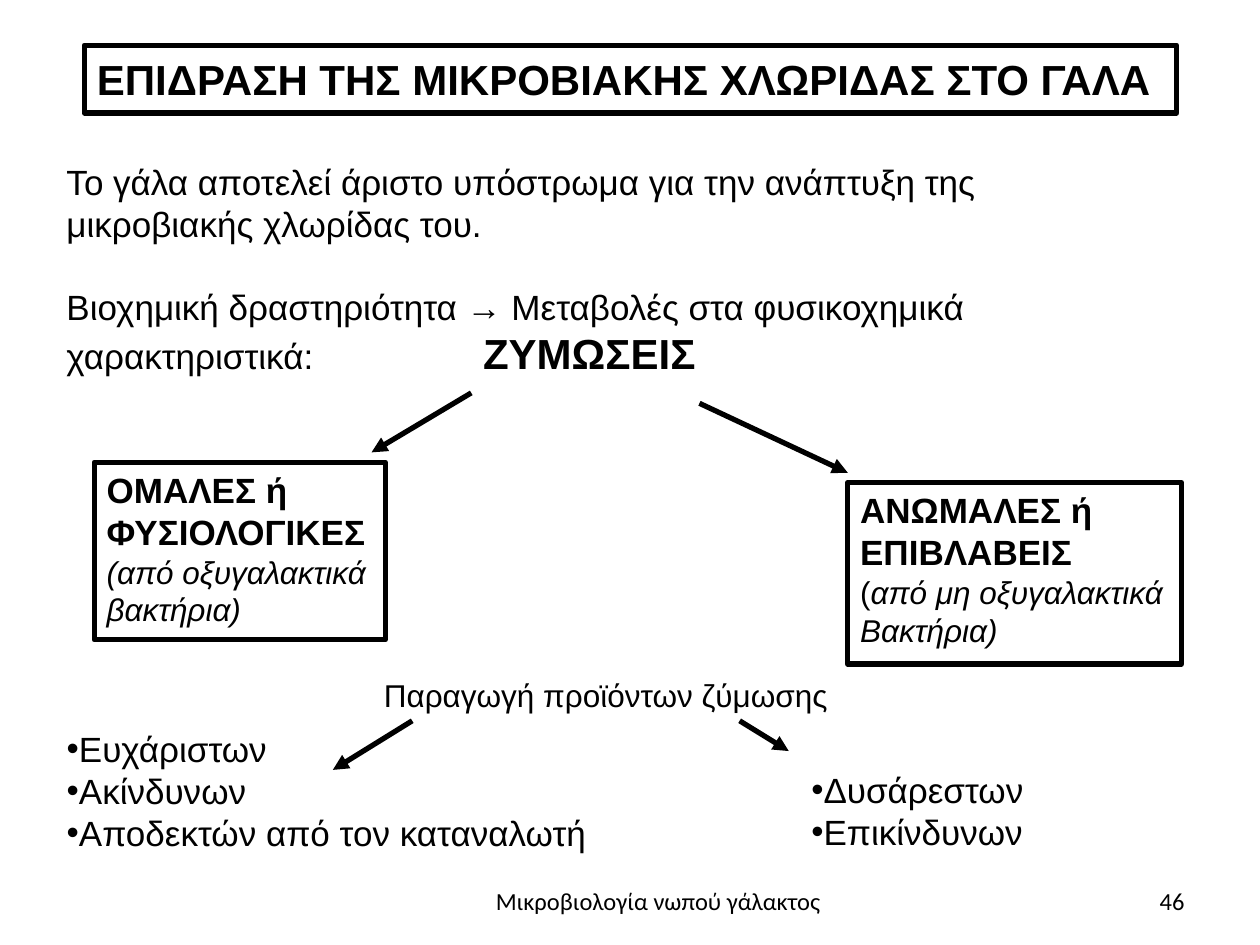
from lxml.etree import SubElement
from pptx import Presentation
from pptx.dml.color import RGBColor
from pptx.enum.shapes import MSO_CONNECTOR, MSO_SHAPE
from pptx.enum.text import MSO_ANCHOR, MSO_AUTO_SIZE, PP_ALIGN
from pptx.oxml.ns import qn
from pptx.util import Cm, Pt

# Content: a paragraph is a list of (text, style) runs
TITLE = [[("ΕΠΙΔΡΑΣΗ ΤΗΣ ΜΙΚΡΟΒΙΑΚΗΣ ΧΛΩΡΙΔΑΣ ΣΤΟ ΓΑΛΑ", "head")]]
INTRO = [
    [("Το γάλα αποτελεί άριστο υπόστρωμα για την ανάπτυξη της "
      "μικροβιακής χλωρίδας του.", "body")],
    [("Βιοχημική δραστηριότητα → Μεταβολές στα φυσικοχημικά "
      "χαρακτηριστικά:\t", "body"), ("ΖΥΜΩΣΕΙΣ", "head")],
]
BOXES = [
    ((1.9, 9.32, 5.87, 3.58), [
        [("ΟΜΑΛΕΣ ή", "bold")],
        [("ΦΥΣΙΟΛΟΓΙΚΕΣ", "bold")],
        [("(από οξυγαλακτικά", "slant")],
        [("βακτήρια)", "slant")],
    ]),
    ((17.09, 9.73, 6.73, 3.66), [
        [("ΑΝΩΜΑΛΕΣ ή", "bold")],
        [("ΕΠΙΒΛΑΒΕΙΣ", "bold")],
        [("(", "small"), ("από μη οξυγαλακτικά", "slant")],
        [("Βακτήρια)", "slant")],
    ]),
]
LISTS = [
    ((1.09, 14.53, 11.23, 2.8),
     ["Ευχάριστων", "Ακίνδυνων", "Αποδεκτών από τον καταναλωτή"]),
    ((16.1, 15.37, 4.8, 1.93), ["Δυσάρεστων", "Επικίνδυνων"]),
]
CAPTION = [[("Παραγωγή προϊόντων ζύμωσης", "small")]]
FOOTER = [[("Μικροβιολογία νωπού γάλακτος", "foot")]]
NUMBER = [[("46", "foot")]]
ARROWS = [  # x and y of the start, x and y of the tip
    (9.5, 7.92, 7.49, 9.12),
    (14.1, 8.13, 17.09, 9.53),
    (8.31, 14.53, 6.71, 15.52),
    (14.91, 14.53, 15.9, 15.14),
]

THEME = {
    "ink": RGBColor(0, 0, 0),
    "line": Pt(3),
    "type": {  # font, size, bold, italic
        "head": ("Arial", 24, True, False),
        "body": ("Arial", 20, False, False),
        "bold": ("Arial", 20, True, False),
        "small": ("Arial", 18, False, False),
        "slant": ("Arial", 18, False, True),
        "foot": ("Calibri", 14, False, False),
    },
}


def style(font, kind):
    font.name, size, font.bold, font.italic = THEME["type"][kind]
    font.size = Pt(size)
    font.color.rgb = THEME["ink"]


def place(shape, box):
    shape.left, shape.top, shape.width, shape.height = map(Cm, box)


def write(shape, paras, align=PP_ALIGN.LEFT, anchor=MSO_ANCHOR.TOP):
    frame = shape.text_frame
    frame.word_wrap = True
    frame.auto_size = MSO_AUTO_SIZE.NONE
    frame.vertical_anchor = anchor
    for i, runs in enumerate(paras):
        para = frame.add_paragraph() if i else frame.paragraphs[0]
        para.alignment = align
        para.space_before = Pt(0)
        first = runs[0][1]
        style(para.font, first)
        for text, kind in runs:
            run = para.add_run()
            run.text = text
            if kind != first:
                style(run.font, kind)
    return frame.paragraphs


def label(box, paras, **opts):
    shape = slide.shapes.add_textbox(*map(Cm, box))
    return write(shape, paras, **opts)


def rule(line):
    line.color.rgb = THEME["ink"]
    line.width = THEME["line"]


deck = Presentation()
deck.slide_width, deck.slide_height = Cm(25.4), Cm(19.05)
slide = deck.slides.add_slide(deck.slide_layouts[3])  # title and two lists
title, *bodies = slide.placeholders

# Framed title
place(title, (1.7, 0.91, 22.02, 1.37))
write(title, TITLE, anchor=MSO_ANCHOR.MIDDLE)
rule(title.line)

# Introduction, with a tab stop before the key word
intro = label((1.09, 3.12, 22.73, 4.65), INTRO)
intro[1].space_before = Pt(23)
props = intro[1]._p.get_or_add_pPr()
tabs = props.makeelement(qn("a:tabLst"), {})
SubElement(tabs, qn("a:tab"), pos=str(Cm(8.4)), algn="l")
props.find(qn("a:defRPr")).addprevious(tabs)

# The two kinds of fermentation
for box, paras in BOXES:
    shape = slide.shapes.add_shape(MSO_SHAPE.RECTANGLE, *map(Cm, box))
    shape.shadow.inherit = False
    shape.fill.background()
    rule(shape.line)
    write(shape, paras)

# Product lists, bullets set tight against the text
for body, (box, items) in zip(bodies, LISTS):
    place(body, box)
    for para in write(body, [[(item, "body")] for item in items]):
        props = para._p.get_or_add_pPr()
        props.set("marL", "0")
        props.set("indent", "0")

# Arrows
for ends in ARROWS:
    arrow = slide.shapes.add_connector(MSO_CONNECTOR.STRAIGHT, *map(Cm, ends))
    rule(arrow.line)
    SubElement(arrow.line._get_or_add_ln(), qn("a:tailEnd"), type="triangle")
    SubElement(arrow._element.spPr, qn("a:effectLst"))

# Caption, footer and slide number
label((7.49, 13.51, 9.8, 1.02), CAPTION)
label((8.84, 17.73, 8.86, 1.2), FOOTER, align=PP_ALIGN.CENTER)
label((18.21, 17.65, 5.92, 1.02), NUMBER,
      align=PP_ALIGN.RIGHT, anchor=MSO_ANCHOR.MIDDLE)

deck.save("out.pptx")
